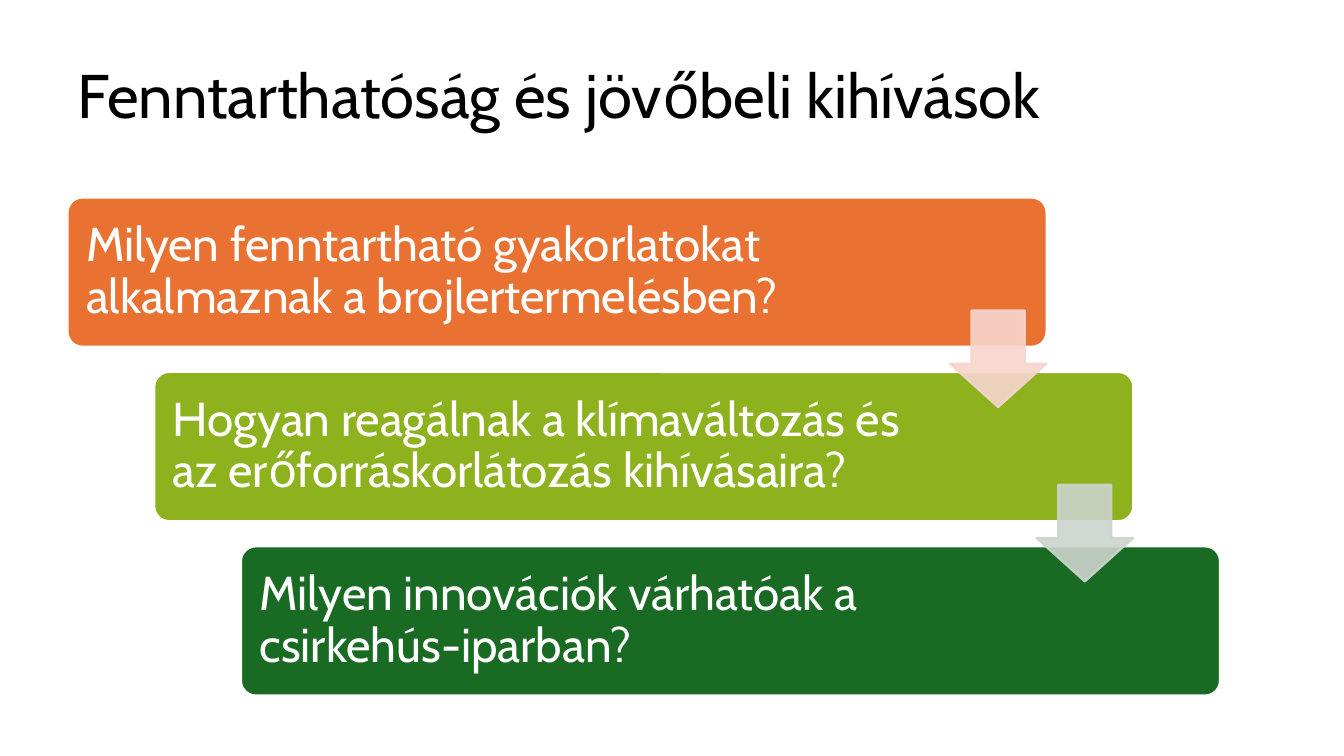
from dataclasses import dataclass

from lxml.etree import SubElement
from pptx import Presentation
from pptx.dml.color import RGBColor as RGB
from pptx.enum.shapes import MSO_SHAPE as Shape
from pptx.enum.text import MSO_ANCHOR as Anchor, PP_ALIGN as Align
from pptx.oxml.ns import qn
from pptx.util import Inches, Pt


@dataclass(frozen=True)
class Theme:
    font: str = "Cabin"
    black: str = "000000"
    white: str = "FFFFFF"
    cards: tuple = ("E97132", "8EB21E", "196B24")
    arrows: tuple = ("F7D5CE", "CCD4CD")
    title: int = 44
    body: int = 34
    line: float = 1.5
    alpha: int = 90


class Deck:
    def __init__(self, theme):
        self.theme = theme
        self.prs = Presentation()
        self.prs.slide_width = Inches(13.33)
        self.prs.slide_height = Inches(7.5)
        self.slide = self.prs.slides.add_slide(self.prs.slide_layouts[5])

    def label(self, frame, text, size, color, anchor):
        frame.word_wrap = True
        frame.vertical_anchor = anchor
        para = frame.paragraphs[0]
        para.text = text
        para.alignment = Align.LEFT
        para.line_spacing = 0.9
        para.font.name = self.theme.font
        para.font.size = Pt(size)
        para.font.color.rgb = RGB.from_string(color)

    def title(self, text, left, top, width, height):
        box = self.slide.shapes.title
        box.left, box.top = Inches(left), Inches(top)
        box.width, box.height = Inches(width), Inches(height)
        self.label(box.text_frame, text, self.theme.title, self.theme.black, Anchor.TOP)

    def shape(self, kind, left, top, width, height, fill, line, adjust):
        item = self.slide.shapes.add_shape(
            kind, Inches(left), Inches(top), Inches(width), Inches(height))
        item.shadow.inherit = False
        for i, value in enumerate(adjust):
            item.adjustments[i] = value
        item.fill.solid()
        item.fill.fore_color.rgb = RGB.from_string(fill)
        item.line.color.rgb = RGB.from_string(line)
        item.line.width = Pt(self.theme.line)
        return item

    def card(self, text, left, top, width, height, fill):
        look = self.theme
        item = self.shape(Shape.ROUNDED_RECTANGLE, left, top, width, height,
                          fill, look.white, [0.1])
        frame = item.text_frame
        frame.margin_left = frame.margin_top = frame.margin_bottom = Inches(0.14)
        frame.margin_right = Inches(1.95)  # keeps the text clear of the arrow
        self.label(frame, text, look.body, look.white, Anchor.MIDDLE)

    def arrow(self, left, top, size, color):
        item = self.shape(Shape.DOWN_ARROW, left, top, size, size,
                          color, color, [0.55, 0.45])
        # Fill and outline are slightly see-through
        for tone in item.element.spPr.iter(qn("a:srgbClr")):
            SubElement(tone, qn("a:alpha"), val=str(self.theme.alpha * 1000))


def main():
    theme = Theme()
    deck = Deck(theme)
    deck.title("Fenntarthatóság és jövőbeli kihívások", 0.67, 0.6, 11.89, 1.24)

    # Staircase of questions
    asks = (
        "Milyen fenntartható gyakorlatokat alkalmaznak a brojlertermelésben?",
        "Hogyan reagálnak a klímaváltozás és az erőforráskorlátozás kihívásaira?",
        "Milyen innovációk várhatóak a csirkehús-iparban?",
    )
    left, top, width, height = 0.67, 1.96, 9.71, 1.48
    right, down = 0.86, 1.73
    for i, (ask, fill) in enumerate(zip(asks, theme.cards)):
        deck.card(ask, left + i * right, top + i * down, width, height, fill)

    # Arrows flush with the right edge of the card they leave
    size = 0.96
    for i, color in enumerate(theme.arrows):
        deck.arrow(left + width - size + i * right, 3.08 + i * down, size, color)

    deck.prs.save("out.pptx")


if __name__ == "__main__":
    main()
